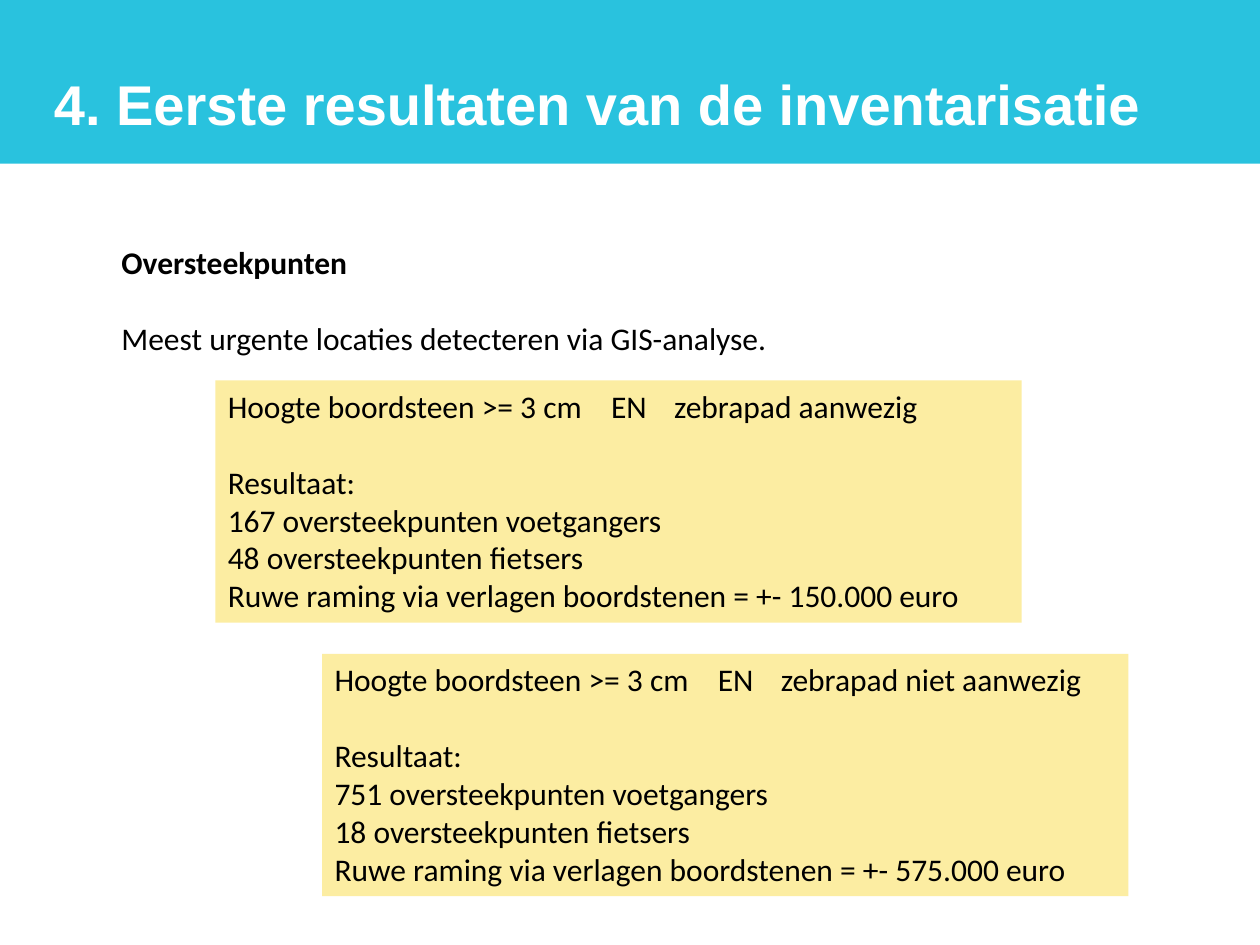
from lxml.etree import SubElement
from pptx import Presentation
from pptx.dml.color import RGBColor
from pptx.enum.shapes import MSO_SHAPE
from pptx.enum.text import MSO_ANCHOR, PP_ALIGN
from pptx.oxml.ns import qn
from pptx.util import Pt

CONDITION_TABS = (219, 255)
BLANK_LINE = 22


def colour(hex_code):
    """Turn a hex string into a colour."""
    return RGBColor.from_string(hex_code)


def add_tabs(paragraph, stops):
    """Give a paragraph left tab stops at the given points."""
    tab_list = SubElement(paragraph._p.get_or_add_pPr(), qn("a:tabLst"))
    for stop in stops:
        SubElement(tab_list, qn("a:tab"), pos=str(Pt(stop)), algn="l")


def write(frame, text, size=18, font="Calibri", color="000000", bold=False,
          first=False, before=0, line_spacing=None, tabs=()):
    """Write one formatted paragraph into a text frame."""
    paragraph = frame.paragraphs[0] if first else frame.add_paragraph()
    if tabs:
        add_tabs(paragraph, tabs)
    paragraph.alignment = PP_ALIGN.LEFT
    if before:
        paragraph.space_before = Pt(before)
    if line_spacing:
        paragraph.line_spacing = Pt(line_spacing)
    run = paragraph.add_run()
    run.text = text
    run.font.size = Pt(size)
    run.font.name = font
    run.font.bold = bold
    run.font.color.rgb = colour(color)


def add_text_area(slide, left, top, width, height, anchor=MSO_ANCHOR.TOP):
    """Add a wrapping text box and return its frame."""
    frame = slide.shapes.add_textbox(Pt(left), Pt(top), Pt(width), Pt(height)).text_frame
    frame.word_wrap = True
    frame.vertical_anchor = anchor
    return frame


def add_panel(slide, left, top, width, height, fill):
    """Add a plain filled rectangle and return its text frame."""
    panel = slide.shapes.add_shape(
        MSO_SHAPE.RECTANGLE, Pt(left), Pt(top), Pt(width), Pt(height))
    panel.shadow.inherit = False
    panel.fill.solid()
    panel.fill.fore_color.rgb = colour(fill)
    panel.line.fill.background()
    panel.text_frame.word_wrap = True
    panel.text_frame.vertical_anchor = MSO_ANCHOR.TOP
    return panel.text_frame


def add_result(slide, left, top, crossing, pedestrians, cyclists, cost):
    """Add a panel with a search condition and its results."""
    result = add_panel(slide, left, top, 460.8, 138.5, "FCEDA2")
    write(result, f"Hoogte boordsteen >= 3 cm\tEN\t{crossing}",
          first=True, tabs=CONDITION_TABS)
    write(result, "Resultaat:", before=BLANK_LINE)
    write(result, f"{pedestrians} oversteekpunten voetgangers")
    write(result, f"{cyclists} oversteekpunten fietsers")
    write(result, f"Ruwe raming via verlagen boordstenen = +- {cost} euro")


def main():
    """Build the slide and save it."""
    deck = Presentation()
    deck.slide_width, deck.slide_height = Pt(720), Pt(540)
    slide = deck.slides.add_slide(deck.slide_layouts[6])

    add_panel(slide, 0, 0, 720, 93.6, "29C2DE")
    title = add_text_area(slide, 23.76, 9.36, 680.4, 67.68, MSO_ANCHOR.MIDDLE)
    write(title, "4. Eerste resultaten van de inventarisatie", size=32, font="Arial",
          color="FFFFFF", bold=True, first=True, line_spacing=70)

    intro = add_text_area(slide, 62.3, 135.4, 582.5, 116.6)
    write(intro, "Oversteekpunten", bold=True, first=True)
    write(intro, "Meest urgente locaties detecteren via GIS-analyse.", before=BLANK_LINE)

    add_result(slide, 123.1, 217.4, "zebrapad aanwezig", 167, 48, "150.000")
    add_result(slide, 184.1, 373.7, "zebrapad niet aanwezig", 751, 18, "575.000")
    deck.save("out.pptx")


if __name__ == "__main__":
    main()
